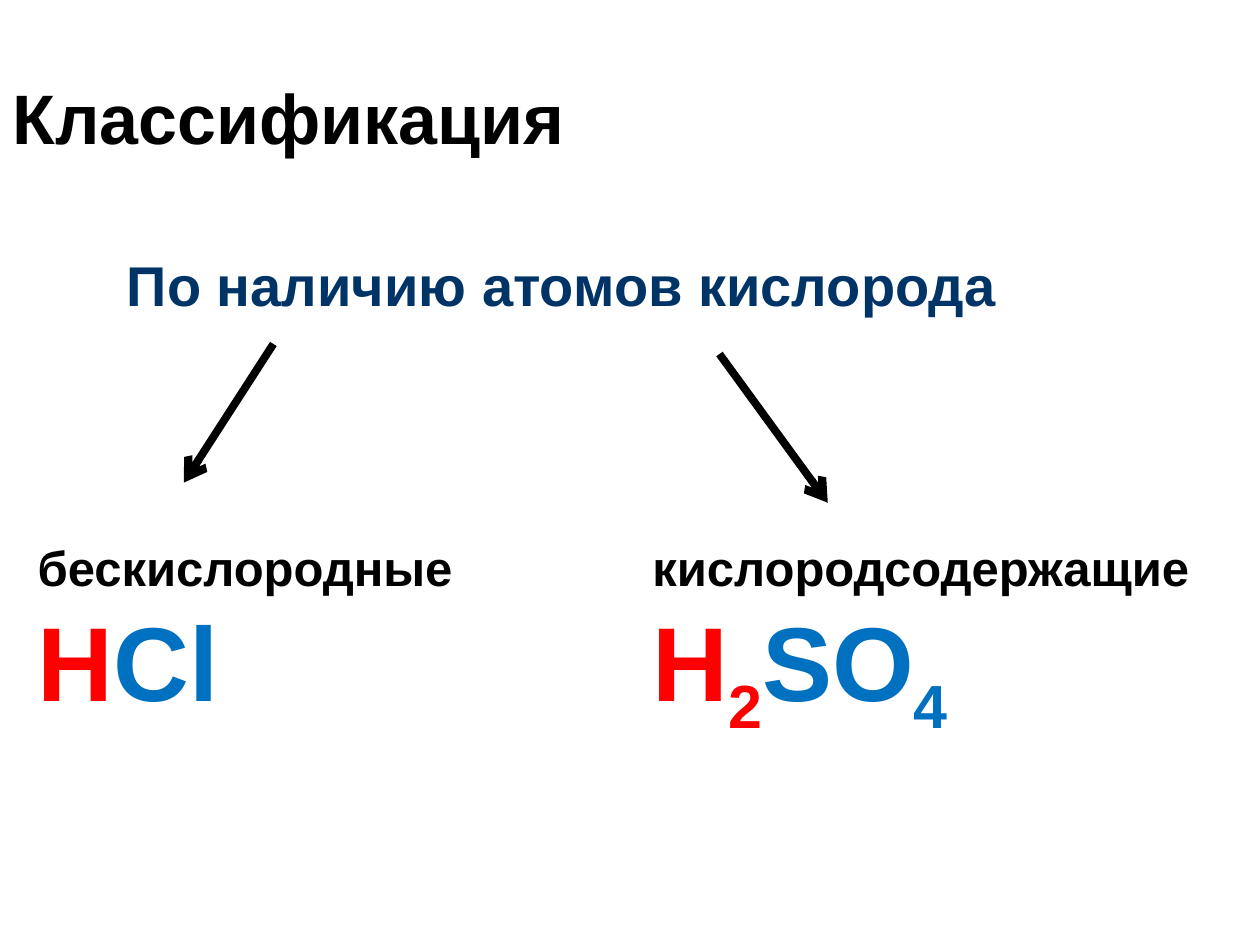
import dataclasses

import pptx
import pptx.dml.color
import pptx.enum.shapes
import pptx.enum.text
import pptx.oxml
import pptx.oxml.ns
import pptx.util
from pptx.util import Inches

FONT = "Arial"
BLACK, NAVY, RED, BLUE = "000000", "003366", "FF0000", "0070C0"


@dataclasses.dataclass
class Part:
    """A piece of a chemical formula."""
    text: str
    color: str
    subscript: bool = False


@dataclasses.dataclass
class AcidClass:
    """A class of acids, its example and the arrow leading to it."""
    name: str
    formula: list[Part]
    left: float
    width: float
    arrow_start: tuple[float, float]
    arrow_end: tuple[float, float]


ACID_CLASSES = [
    AcidClass("бескислородные", [Part("H", RED), Part("Cl", BLUE)],
              0.2, 3.7, (2.17, 2.73), (1.46, 3.83)),
    AcidClass("кислородсодержащие",
              [Part("H", RED), Part("2", RED, True),
               Part("SO", BLUE), Part("4", BLUE, True)],
              5.08, 4.57, (5.71, 2.81), (6.57, 3.99)),
]


def rgb(color: str) -> pptx.dml.color.RGBColor:
    return pptx.dml.color.RGBColor.from_string(color)


def format_run(run, size: float, color: str) -> None:
    run.font.name = FONT
    run.font.size = pptx.util.Pt(size)
    run.font.bold = True
    run.font.color.rgb = rgb(color)


def add_text(slide, text: str, left: float, top: float, width: float,
             height: float, size: float, color: str):
    box = slide.shapes.add_textbox(Inches(left), Inches(top),
                                   Inches(width), Inches(height))
    frame = box.text_frame
    frame.word_wrap = True
    frame.text = text
    format_run(frame.paragraphs[0].runs[0], size, color)
    return frame


def add_arrow(slide, start: tuple[float, float], end: tuple[float, float]) -> None:
    arrow = slide.shapes.add_connector(
        pptx.enum.shapes.MSO_CONNECTOR.STRAIGHT,
        *(Inches(value) for value in start + end))
    arrow.line.color.rgb = rgb(BLACK)
    arrow.line.width = pptx.util.Pt(4.5)
    namespace = pptx.oxml.ns.nsdecls("a")
    arrow.line._get_or_add_ln().append(
        pptx.oxml.parse_xml(f'<a:tailEnd {namespace} type="arrow"/>'))
    arrow._element.spPr.append(
        pptx.oxml.parse_xml(f"<a:effectLst {namespace}/>"))


def add_acid_class(slide, acid: AcidClass) -> None:
    frame = add_text(slide, acid.name, acid.left, 4.22, acid.width, 1.58, 28, BLACK)
    formula = frame.add_paragraph()
    for part in acid.formula:
        run = formula.add_run()
        run.text = part.text
        format_run(run, 60, part.color)
        if part.subscript:
            run._r.get_or_add_rPr().set("baseline", "-25000")
    add_arrow(slide, acid.arrow_start, acid.arrow_end)


def main() -> None:
    deck = pptx.Presentation()
    deck.slide_width, deck.slide_height = Inches(10), Inches(7.5)
    slide = deck.slides.add_slide(deck.slide_layouts[5])

    # Title
    title = slide.shapes.title
    title.left, title.top = Inches(0), Inches(0.3)
    title.width, title.height = Inches(9.5), Inches(1.25)
    title.text_frame.text = "Классификация"
    title.text_frame.vertical_anchor = pptx.enum.text.MSO_ANCHOR.MIDDLE
    heading = title.text_frame.paragraphs[0]
    heading.alignment = pptx.enum.text.PP_ALIGN.LEFT
    format_run(heading.runs[0], 40, BLACK)

    # Criterion and the two classes it gives
    add_text(slide, "По наличию атомов кислорода", 0.91, 1.94, 7.64, 0.64, 32, NAVY)
    for acid in ACID_CLASSES:
        add_acid_class(slide, acid)

    deck.save("out.pptx")


if __name__ == "__main__":
    main()
